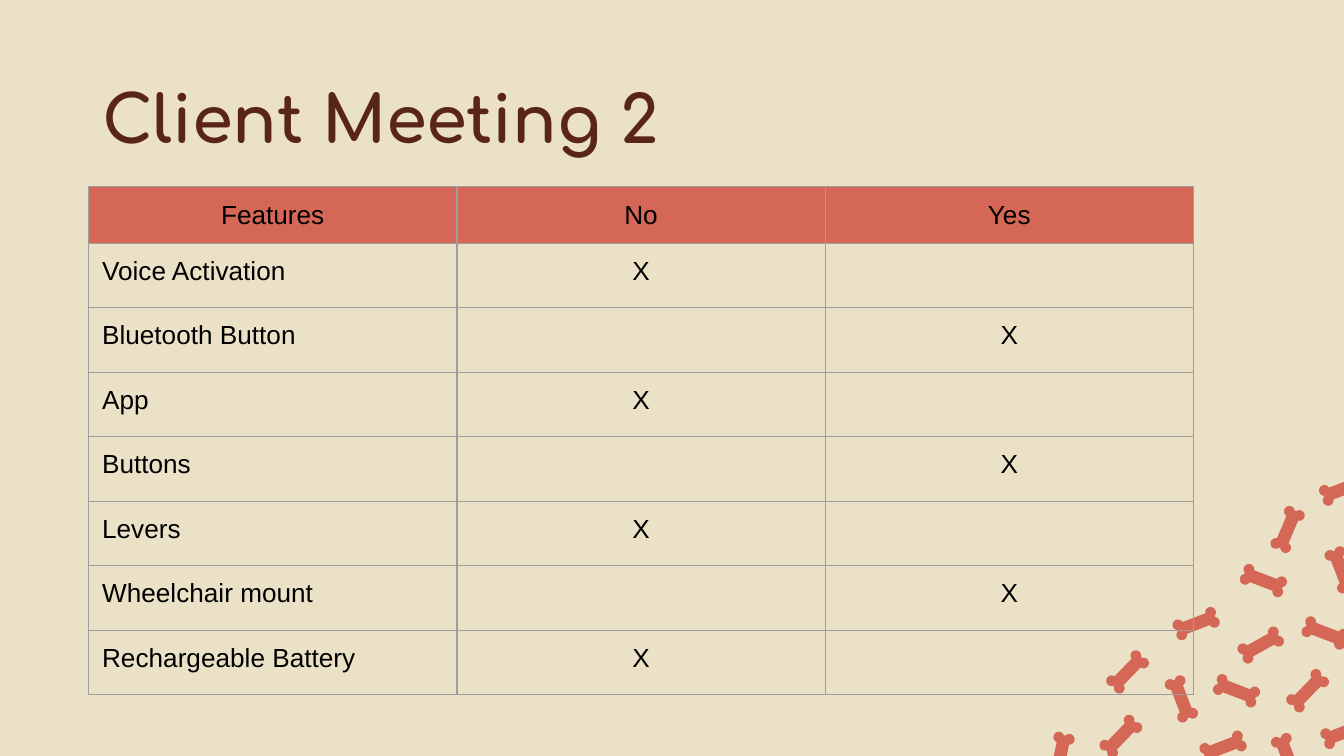
import math

from lxml import etree
from pptx import Presentation
from pptx.dml.color import RGBColor
from pptx.enum import text
from pptx.oxml import ns
from pptx.util import Inches, Pt

COLORS = {"sand": "EAE1C7", "coral": "D56756", "brown": "5A2519",
          "grid": "9E9E9E", "black": "000000"}
SLIDE_WIDTH = 10
SLIDE_HEIGHT = SLIDE_WIDTH * 9 / 16
CELL_SIZE = 14

FEATURES = [("Voice Activation", False), ("Bluetooth Button", True),
            ("App", False), ("Buttons", True), ("Levers", False),
            ("Wheelchair mount", True), ("Rechargeable Battery", False)]

# Centre x, centre y, clockwise angle in degrees
BONES = [(9.98, 4.24, 69), (9.99, 3.64, -21), (9.58, 3.94, 113),
         (9.4, 4.32, 21), (8.9, 4.64, -21), (10, 5.45, -21),
         (8.39, 5, -46), (9.73, 5.14, -46), (8.79, 5.2, 69),
         (9.58, 5.63, 69), (9.2, 5.14, 21), (9.86, 4.71, 21),
         (9.1, 5.56, -21), (9.38, 4.8, -29), (7.89, 5.62, 102),
         (8.34, 5.48, -46)]


def color(name):
    return RGBColor.from_string(COLORS[name])


def add_span(para, words, size, font, shade, bold=False):
    span = para.add_run()
    span.text = words
    span.font.size = Pt(size)
    span.font.name = font
    span.font.bold = bold
    span.font.color.rgb = color(shade)


def set_title(slide, words):
    title = slide.shapes.title
    title.left, title.top = Inches(0.66), Inches(0.48)
    title.width, title.height = Inches(8.69), Inches(0.63)
    frame = title.text_frame
    frame.word_wrap = True
    frame.auto_size = text.MSO_AUTO_SIZE.NONE
    frame.vertical_anchor = text.MSO_ANCHOR.TOP
    frame.margin_left = frame.margin_right = Inches(0.1)
    frame.margin_top = frame.margin_bottom = Inches(0.1)
    para = frame.paragraphs[0]
    para.alignment = text.PP_ALIGN.LEFT
    add_span(para, words, 35, "Comfortaa", "brown", bold=True)


def bone_outline():
    """Points of a level bone around (0, 0): one knob, mirrored to all four."""
    knob_x, knob_y, radius = 0.13, 0.04, 0.04
    angles = [math.radians(degrees) for degrees in range(190, 421, 23)]
    knob = [(knob_x + radius * math.cos(a), radius * math.sin(a) - knob_y)
            for a in angles]
    right = knob + [(x, -y) for x, y in reversed(knob)]
    return right + [(-x, -y) for x, y in right]


def clip_right(points, limit):
    """Cut a closed outline along the vertical line x = limit."""
    kept = []
    for (x1, y1), (x2, y2) in zip(points, points[1:] + points[:1]):
        if x1 <= limit:
            kept.append((x1, y1))
        if (x1 <= limit) != (x2 <= limit):
            kept.append((limit, y1 + (y2 - y1) * (limit - x1) / (x2 - x1)))
    return kept


def add_bone(slide, center_x, center_y, degrees):
    cos, sin = math.cos(math.radians(degrees)), math.sin(math.radians(degrees))
    turned = [(center_x + x * cos - y * sin, center_y + x * sin + y * cos)
              for x, y in bone_outline()]
    points = [(Inches(x), Inches(y)) for x, y in clip_right(turned, SLIDE_WIDTH)]
    builder = slide.shapes.build_freeform(*points[0])
    builder.add_line_segments(points[1:], close=True)
    bone = builder.convert_to_shape()
    bone.shadow.inherit = False
    bone.fill.solid()
    bone.fill.fore_color.rgb = color("coral")
    bone.line.fill.background()


def set_borders(cell):
    properties = cell._tc.get_or_add_tcPr()
    for index, side in enumerate(("lnL", "lnR", "lnT", "lnB")):
        line = etree.Element(ns.qn(f"a:{side}"), w=str(Pt(0.75)))
        fill = etree.SubElement(line, ns.qn("a:solidFill"))
        etree.SubElement(fill, ns.qn("a:srgbClr"), val=COLORS["grid"])
        properties.insert(index, line)


def fill_cell(cell, words, centered, fill=None):
    cell.margin_left = cell.margin_right = Inches(0.1)
    cell.margin_top = cell.margin_bottom = Inches(0.1)
    if fill:
        cell.fill.solid()
        cell.fill.fore_color.rgb = color(fill)
    else:
        cell.fill.background()
    set_borders(cell)
    para = cell.text_frame.paragraphs[0]
    if words:
        para.alignment = text.PP_ALIGN.CENTER if centered else text.PP_ALIGN.LEFT
        add_span(para, words, CELL_SIZE, "Arial", "black")
    else:  # keeps an empty cell from stretching its row
        etree.SubElement(para._p, ns.qn("a:endParaRPr"), sz=str(CELL_SIZE * 100))


def add_feature_table(slide):
    rows = [("Features", "No", "Yes")]
    rows += [(name, "" if wanted else "X", "X" if wanted else "")
             for name, wanted in FEATURES]
    header_height, row_height, column_width = 0.41, 0.48, 2.74
    table = slide.shapes.add_table(
        len(rows), 3, Inches(0.66), Inches(1.39), Inches(3 * column_width),
        Inches(header_height + row_height * len(FEATURES))).table
    table.first_row = table.horz_banding = False
    for column in table.columns:
        column.width = Inches(column_width)
    for r, row in enumerate(rows):
        is_header = r == 0
        table.rows[r].height = Inches(header_height if is_header else row_height)
        for c, words in enumerate(row):
            fill_cell(table.cell(r, c), words, centered=is_header or c > 0,
                      fill="coral" if is_header else None)


def main():
    deck = Presentation()
    deck.slide_width, deck.slide_height = Inches(SLIDE_WIDTH), Inches(SLIDE_HEIGHT)
    slide = deck.slides.add_slide(deck.slide_layouts[5])
    slide.background.fill.solid()
    slide.background.fill.fore_color.rgb = color("sand")
    for bone in BONES:
        add_bone(slide, *bone)
    set_title(slide, "Client Meeting 2")
    add_feature_table(slide)
    deck.save("out.pptx")


if __name__ == "__main__":
    main()
